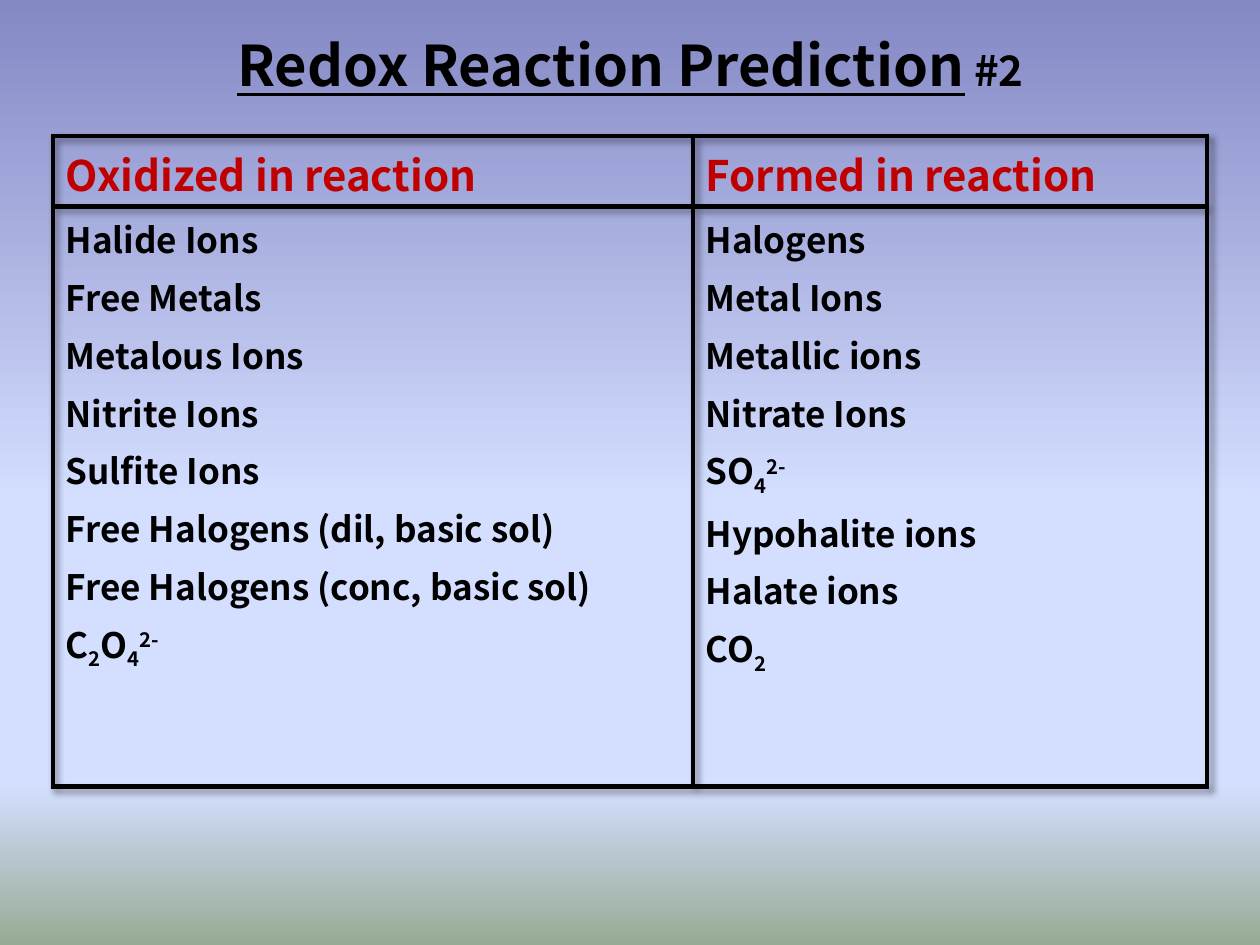
from lxml import etree
from pptx import Presentation
from pptx.dml.color import RGBColor
from pptx.enum.text import MSO_ANCHOR, PP_ALIGN
from pptx.oxml import parse_xml
from pptx.oxml.ns import qn
from pptx.util import Inches, Pt

MIDDLE = MSO_ANCHOR.MIDDLE
CENTER = PP_ALIGN.CENTER
FONT = "Noto Sans CJK JP"
BLACK = "000000"
RED = "C00000"
DRAWING = 'xmlns:a="http://schemas.openxmlformats.org/drawingml/2006/main"'
SUB, SUP = -25000, 30000


def add_run(paragraph, text, size, color, baseline=0):
    run = paragraph.add_run()
    run.text = text
    run.font.name = FONT
    run.font.size = Pt(size)
    run.font.bold = True
    run.font.color.rgb = RGBColor.from_string(color)
    if baseline:
        run.font._element.set("baseline", str(baseline))
    return run


prs = Presentation()
prs.slide_width, prs.slide_height = Inches(10), Inches(7.5)
slide = prs.slides.add_slide(prs.slide_layouts[6])

sky = slide.background.fill
sky.gradient()
sky.gradient_angle = 270
stops = slide.background._cSld.find(".//" + qn("a:gsLst"))
for stop in list(stops):
    stops.remove(stop)
for percent, color in [(0, "8488C4"), (53, "D4DEFF"), (83, "D4DEFF"), (100, "96AB94")]:
    stop = etree.SubElement(stops, qn("a:gs"), pos=str(percent * 1000))
    etree.SubElement(stop, qn("a:srgbClr"), val=color)

title = slide.shapes.add_textbox(Inches(0.92), Inches(0.17), Inches(8.17), Inches(0.67))
title.text_frame.word_wrap = True
title.text_frame.vertical_anchor = MIDDLE
heading = title.text_frame.paragraphs[0]
heading.alignment = CENTER
add_run(heading, "Redox Reaction Prediction", 32, BLACK).font.underline = True
add_run(heading, " #2", 24, BLACK)

headers = ["Oxidized in reaction", "Formed in reaction"]
reactions = [
    ("Halide Ions", "Halogens"),
    ("Free Metals", "Metal Ions"),
    ("Metalous Ions", "Metallic ions"),
    ("Nitrite Ions", "Nitrate Ions"),
    ("Sulfite Ions", [("SO", 0), ("4", SUB), ("2-", SUP)]),
    ("Free Halogens (dil, basic sol)", "Hypohalite ions"),
    ("Free Halogens (conc, basic sol)", "Halate ions"),
    ([("C", 0), ("2", SUB), ("O", 0), ("4", SUB), ("2-", SUP)], [("CO", 0), ("2", SUB)]),
]

table = slide.shapes.add_table(
    2, 2, Inches(0.42), Inches(1.08), Inches(9.16), Inches(5.16)
).table
table.first_row = False
table.horz_banding = False
for column, width in zip(table.columns, (5.08, 4.08)):
    column.width = Inches(width)
for row, height in zip(table.rows, (0.56, 4.6)):
    row.height = Inches(height)

table._tbl.tblPr.insert(0, parse_xml(
    f'<a:effectLst {DRAWING}><a:outerShdw blurRad="50800" dist="38100" dir="2700000">'
    '<a:srgbClr val="000000"><a:alpha val="40000"/></a:srgbClr></a:outerShdw></a:effectLst>'
))

bodies = list(zip(*reactions))
contents = [([header], 24, RED) for header in headers] + [(body, 20, BLACK) for body in bodies]
for cell, (entries, size, color) in zip(table.iter_cells(), contents):
    for number, entry in enumerate(entries):
        frame = cell.text_frame
        paragraph = frame.add_paragraph() if number else frame.paragraphs[0]
        paragraph.space_before = Pt(size * 0.2)
        pieces = [(entry, 0)] if isinstance(entry, str) else entry
        for text, baseline in pieces:
            add_run(paragraph, text, size, color, baseline)
    cell.fill.background()
    properties = cell._tc.get_or_add_tcPr()
    for position, side in enumerate(("lnL", "lnR", "lnT", "lnB")):
        properties.insert(position, parse_xml(
            f'<a:{side} {DRAWING} w="{Pt(3)}"><a:solidFill><a:srgbClr val="{BLACK}"/>'
            f'</a:solidFill></a:{side}>'
        ))

prs.save("out.pptx")
